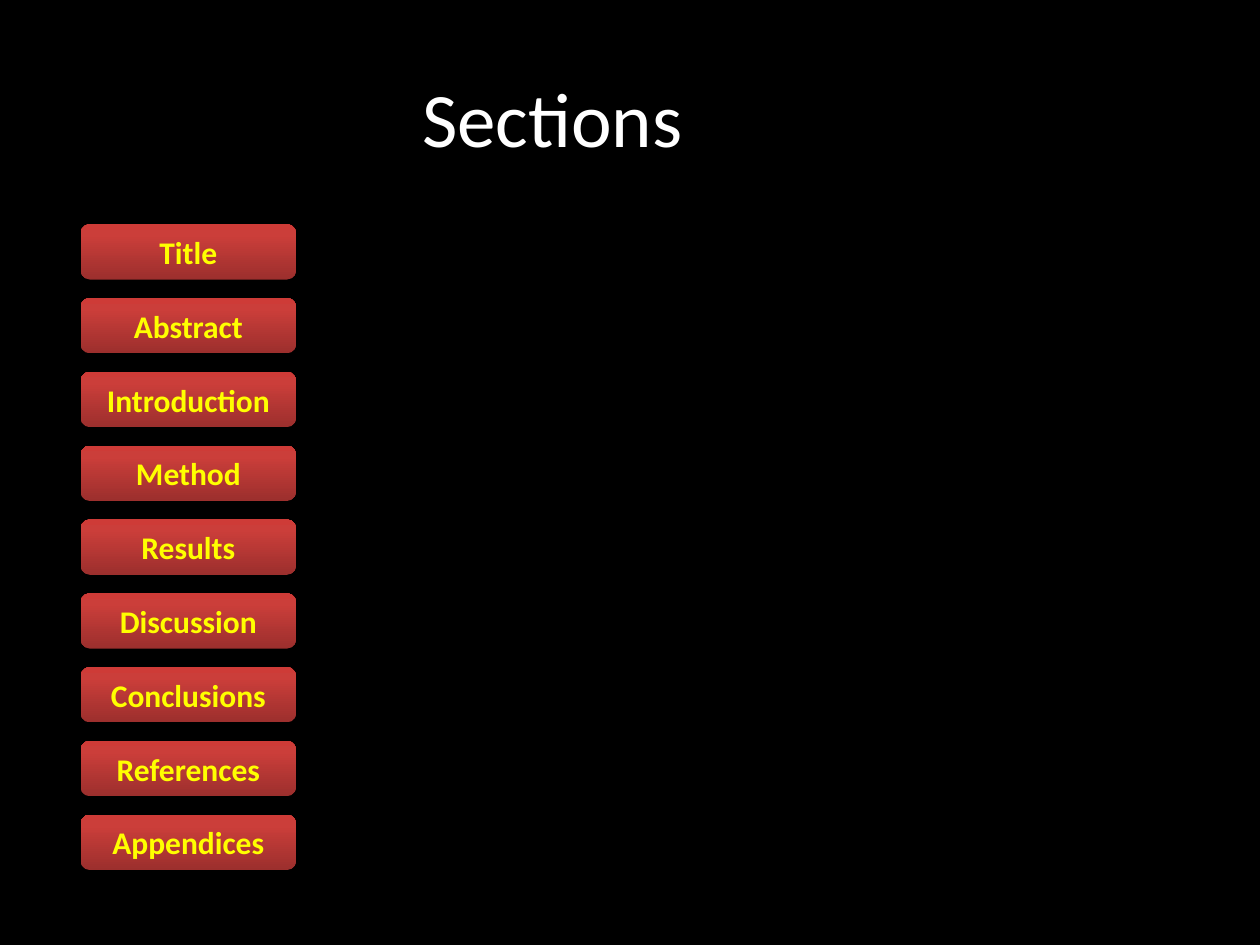
from copy import deepcopy

from pptx import Presentation
from pptx.dml.color import RGBColor
from pptx.enum.shapes import MSO_SHAPE
from pptx.enum.text import MSO_ANCHOR, PP_ALIGN
from pptx.oxml.ns import qn
from pptx.util import Pt

BLACK = RGBColor(0x00, 0x00, 0x00)
WHITE = RGBColor(0xFF, 0xFF, 0xFF)
YELLOW = RGBColor(0xFF, 0xFF, 0x00)
DARK_RED = RGBColor(0x9C, 0x2F, 0x2D)
MID_RED = RGBColor(0xCB, 0x3E, 0x3A)
BRIGHT_RED = RGBColor(0xCE, 0x3B, 0x37)

FONT = "Calibri"
BUTTON_GRADIENT = [(0, DARK_RED), (0.8, MID_RED), (1, BRIGHT_RED)]
SECTIONS = ["Title", "Abstract", "Introduction", "Method", "Results",
            "Discussion", "Conclusions", "References", "Appendices"]
BUTTON_LEFT, FIRST_TOP = 46.1, 128.1
BUTTON_WIDTH, BUTTON_HEIGHT = 123.1, 31.7
BUTTON_PITCH = 42.18


def write_centred(shape, text, size, color, bold=False):
    frame = shape.text_frame
    frame.word_wrap = True
    frame.vertical_anchor = MSO_ANCHOR.MIDDLE
    paragraph = frame.paragraphs[0]
    paragraph.alignment = PP_ALIGN.CENTER
    run = paragraph.add_run()
    run.text = text
    run.font.name = FONT
    run.font.size = Pt(size)
    run.font.bold = bold
    run.font.color.rgb = color


def fill_gradient(shape, colors):
    """Fill from bottom to top with three (position, color) stops."""
    shape.fill.gradient()
    shape.fill.gradient_angle = 90
    stop_list = shape.fill._xPr.find(qn("a:gradFill")).find(qn("a:gsLst"))
    stop_list.append(deepcopy(stop_list[-1]))
    for stop, (position, color) in zip(shape.fill.gradient_stops, colors):
        stop.position = position
        stop.color.rgb = color


def add_heading(slide, text):
    heading = slide.shapes.add_textbox(Pt(36), Pt(21.6), Pt(559.4), Pt(90))
    write_centred(heading, text, 44, WHITE)


def add_section_button(slide, label, top):
    button = slide.shapes.add_shape(
        MSO_SHAPE.ROUNDED_RECTANGLE, Pt(BUTTON_LEFT), Pt(top),
        Pt(BUTTON_WIDTH), Pt(BUTTON_HEIGHT))
    button.shadow.inherit = False
    button.line.fill.background()
    fill_gradient(button, BUTTON_GRADIENT)
    write_centred(button, label, 18, YELLOW, bold=True)


def main():
    deck = Presentation()
    deck.slide_width, deck.slide_height = Pt(720), Pt(540)
    slide = deck.slides.add_slide(deck.slide_layouts[6])
    slide.background.fill.solid()
    slide.background.fill.fore_color.rgb = BLACK
    add_heading(slide, "Sections")
    for row, section in enumerate(SECTIONS):
        add_section_button(slide, section, FIRST_TOP + row * BUTTON_PITCH)
    deck.save("out.pptx")


if __name__ == "__main__":
    main()
